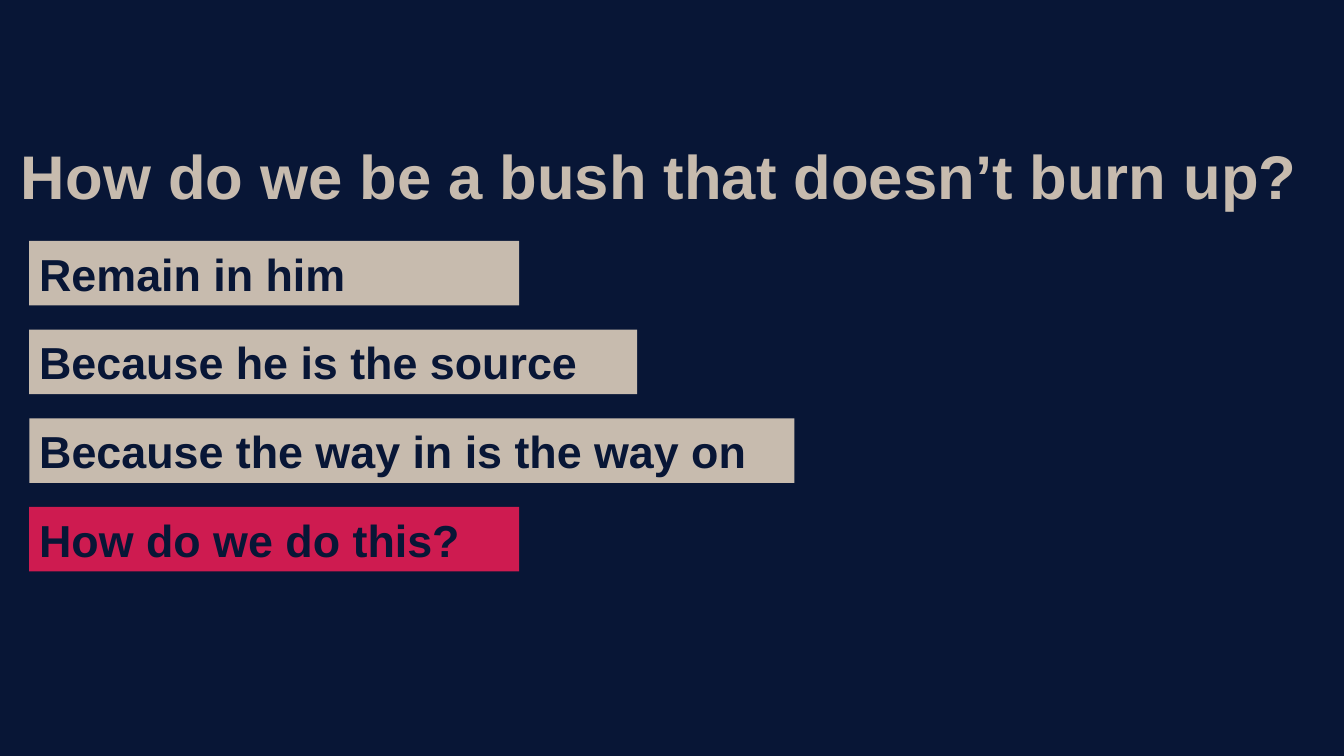
"""Build a slide with one question and four answer bars."""
from dataclasses import dataclass

from pptx import Presentation
from pptx.dml.color import RGBColor
from pptx.enum.shapes import MSO_SHAPE
from pptx.enum.text import MSO_ANCHOR, PP_ALIGN
from pptx.shapes.autoshape import Shape
from pptx.slide import Slide
from pptx.util import Inches, Pt

SLIDE_WIDTH = Inches(13.33)
SLIDE_HEIGHT = Inches(7.5)


@dataclass(frozen=True)
class Theme:
    """Colours, font and type sizes of the slide."""
    navy: RGBColor = RGBColor(0x08, 0x16, 0x36)
    sand: RGBColor = RGBColor(0xC7, 0xBB, 0xAE)
    crimson: RGBColor = RGBColor(0xCE, 0x1B, 0x50)
    font: str = "Arial"
    title_size: Pt = Pt(44)
    bar_size: Pt = Pt(32)


@dataclass(frozen=True)
class Grid:
    """Left edge and row rhythm of the bars, in inches."""
    left: float = 0.29
    top: float = 2.39
    pitch: float = 0.88
    height: float = 0.64


@dataclass(frozen=True)
class Bar:
    """One answer bar with its width in inches."""
    text: str
    width: float
    fill: RGBColor


THEME = Theme()
GRID = Grid()
BARS = (
    Bar("Remain in him", 4.86, THEME.sand),
    Bar("Because he is the source", 6.03, THEME.sand),
    Bar("Because the way in is the way on", 7.59, THEME.sand),
    Bar("How do we do this?", 4.86, THEME.crimson),
)


def write_text(box: Shape, text: str, size: Pt, color: RGBColor, anchor: MSO_ANCHOR) -> None:
    """Fill a box with one bold, left-aligned paragraph."""
    frame = box.text_frame
    frame.word_wrap = True
    frame.vertical_anchor = anchor
    para = frame.paragraphs[0]
    para.text = text
    para.alignment = PP_ALIGN.LEFT
    para.font.name = THEME.font
    para.font.size = size
    para.font.bold = True
    para.font.color.rgb = color


def add_title(page: Slide, text: str) -> None:
    """Place the question above the bars."""
    box = page.shapes.add_textbox(Inches(0.11), Inches(0.99), Inches(13.11), Inches(1.17))
    write_text(box, text, THEME.title_size, THEME.sand, MSO_ANCHOR.BOTTOM)
    box.text_frame.paragraphs[0].line_spacing = 0.9


def add_bar(page: Slide, row: int, bar: Bar) -> None:
    """Draw one answer bar on its grid row."""
    top = Inches(GRID.top + row * GRID.pitch)
    box = page.shapes.add_shape(
        MSO_SHAPE.RECTANGLE, Inches(GRID.left), top, Inches(bar.width), Inches(GRID.height)
    )
    box.shadow.inherit = False
    box.fill.solid()
    box.fill.fore_color.rgb = bar.fill
    box.line.fill.background()
    write_text(box, bar.text, THEME.bar_size, THEME.navy, MSO_ANCHOR.MIDDLE)


def main() -> None:
    """Build and save the deck."""
    deck = Presentation()
    deck.slide_width = SLIDE_WIDTH
    deck.slide_height = SLIDE_HEIGHT
    page = deck.slides.add_slide(deck.slide_layouts[6])
    page.background.fill.solid()
    page.background.fill.fore_color.rgb = THEME.navy
    add_title(page, "How do we be a bush that doesn’t burn up?")
    for row, bar in enumerate(BARS):
        add_bar(page, row, bar)
    deck.save("out.pptx")


if __name__ == "__main__":
    main()
